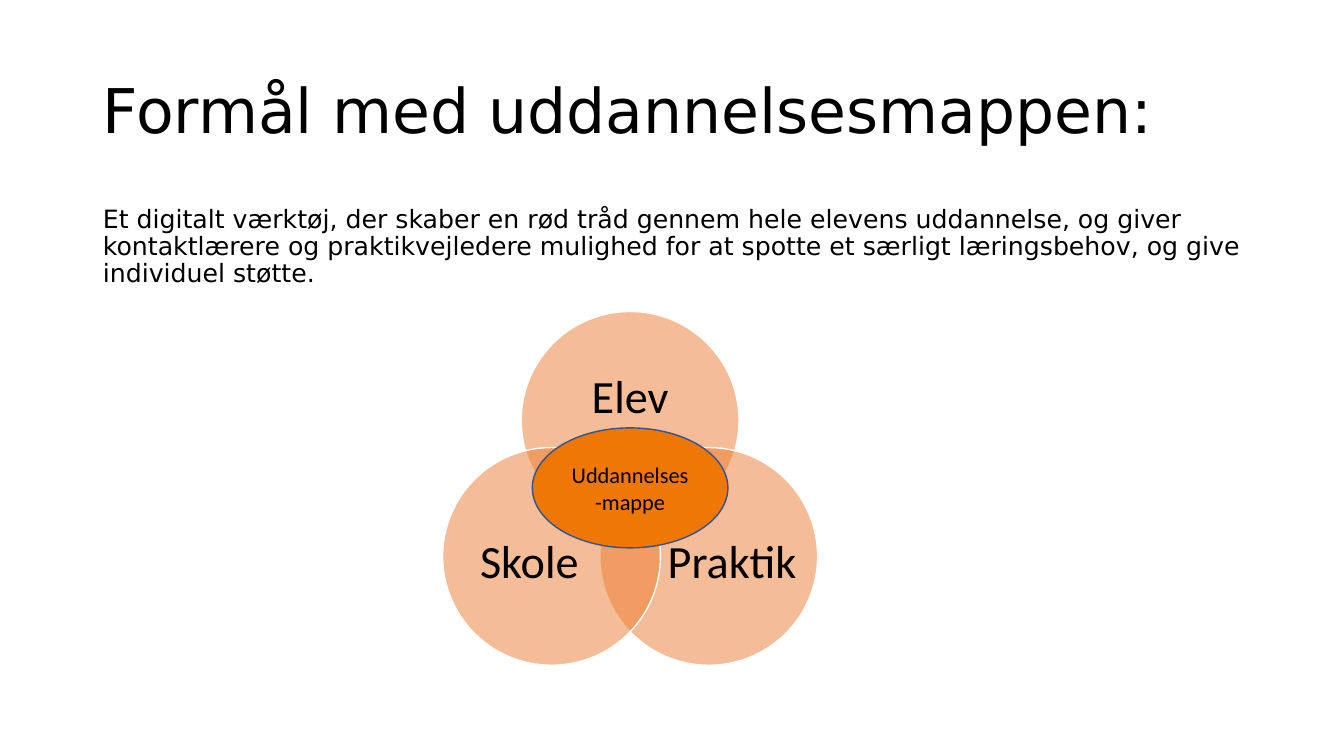
from math import cos, radians, sin

from lxml import etree
from pptx import Presentation
from pptx.dml.color import RGBColor
from pptx.enum.shapes import MSO_SHAPE
from pptx.enum.text import MSO_ANCHOR, MSO_AUTO_SIZE, PP_ALIGN
from pptx.oxml.ns import qn
from pptx.util import Inches, Pt

OVAL = MSO_SHAPE.OVAL
TOP, MIDDLE = MSO_ANCHOR.TOP, MSO_ANCHOR.MIDDLE
LEFT, CENTER = PP_ALIGN.LEFT, PP_ALIGN.CENTER
NO_FIT = MSO_AUTO_SIZE.NONE

TITLE = "Formål med uddannelsesmappen:"
BODY = ("Et digitalt værktøj, der skaber en rød tråd gennem hele elevens "
        "uddannelse, og giver kontaktlærere og praktikvejledere mulighed for "
        "at spotte et særligt læringsbehov, og give individuel støtte.")
CORE = "Uddannelses-mappe"
# Label, angle of its circle, then centre and size of the label
CIRCLES = [
    ("Elev", -90, (6.25, 3.95), (1.58, 0.97)),
    ("Praktik", 30, (7.26, 5.59), (1.29, 1.19)),
    ("Skole", 150, (5.25, 5.59), (1.29, 1.19)),
]

WIDTH, HEIGHT = 13.33, 7.5
MARGIN = 0.92
MID_X, MID_Y = 6.25, 5.07
ORBIT, SIZE = 0.9, 2.16
CORE_Y, CORE_SIZE = 4.84, (1.94, 1.19)


def color(code):
    return RGBColor.from_string(code)


def around(x, y, wide, high):
    """Turn a centre and a size into left, top, width and height."""
    return [Inches(v) for v in (x - wide / 2, y - high / 2, wide, high)]


def write(shape, text, size, font, align, anchor, spacing=0.9):
    """Fill the shape with one paragraph without bullet or indent."""
    frame = shape.text_frame
    frame.word_wrap = True
    frame.auto_size = NO_FIT
    frame.vertical_anchor = anchor
    frame.text = text
    para = frame.paragraphs[0]
    para.alignment = align
    para.line_spacing = spacing
    para.space_before = Pt(0)
    props = para._p.get_or_add_pPr()
    props.set("marL", "0")
    props.set("indent", "0")
    etree.SubElement(props, qn("a:buNone"))
    para.font.size = Pt(size)
    para.font.name = font
    para.font.color.rgb = color("000000")
    return frame


def place(holder, top, high):
    holder.left, holder.top = Inches(MARGIN), Inches(top)
    holder.width, holder.height = Inches(WIDTH - 2 * MARGIN), Inches(high)


def oval(box, fill, line, alpha=None):
    shape = slide.shapes.add_shape(OVAL, *box)
    shape.shadow.inherit = False
    shape.fill.solid()
    shape.fill.fore_color.rgb = color(fill)
    shape.line.color.rgb = color(line)
    shape.line.width = Pt(1)
    if alpha:
        tone = shape.fill._xPr.find(qn("a:solidFill"))[0]
        etree.SubElement(tone, qn("a:alpha"), val=str(alpha * 1000))
    return shape


deck = Presentation()
deck.slide_width, deck.slide_height = Inches(WIDTH), Inches(HEIGHT)
slide = deck.slides.add_slide(deck.slide_layouts[1])

title, body = slide.placeholders
place(title, 0.4, 1.45)
write(title, TITLE, 44, "DejaVu Sans", LEFT, MIDDLE)
place(body, 2, 4.76)
write(body, BODY, 18, "DejaVu Sans", LEFT, TOP)

for label, angle, spot, area in CIRCLES:
    x = MID_X + ORBIT * cos(radians(angle))
    y = MID_Y + ORBIT * sin(radians(angle))
    oval(around(x, y, SIZE, SIZE), "ED7D31", "FFFFFF", 50)
    box = slide.shapes.add_textbox(*around(*spot, *area))
    frame = write(box, label, 33, "Calibri", CENTER, MIDDLE)
    frame.margin_left = frame.margin_right = 0
    frame.margin_top = frame.margin_bottom = 0

core = oval(around(MID_X, CORE_Y, *CORE_SIZE), "EF7703", "325491")
write(core, CORE, 16, "Calibri", CENTER, MIDDLE, 1.0)

deck.save("out.pptx")
